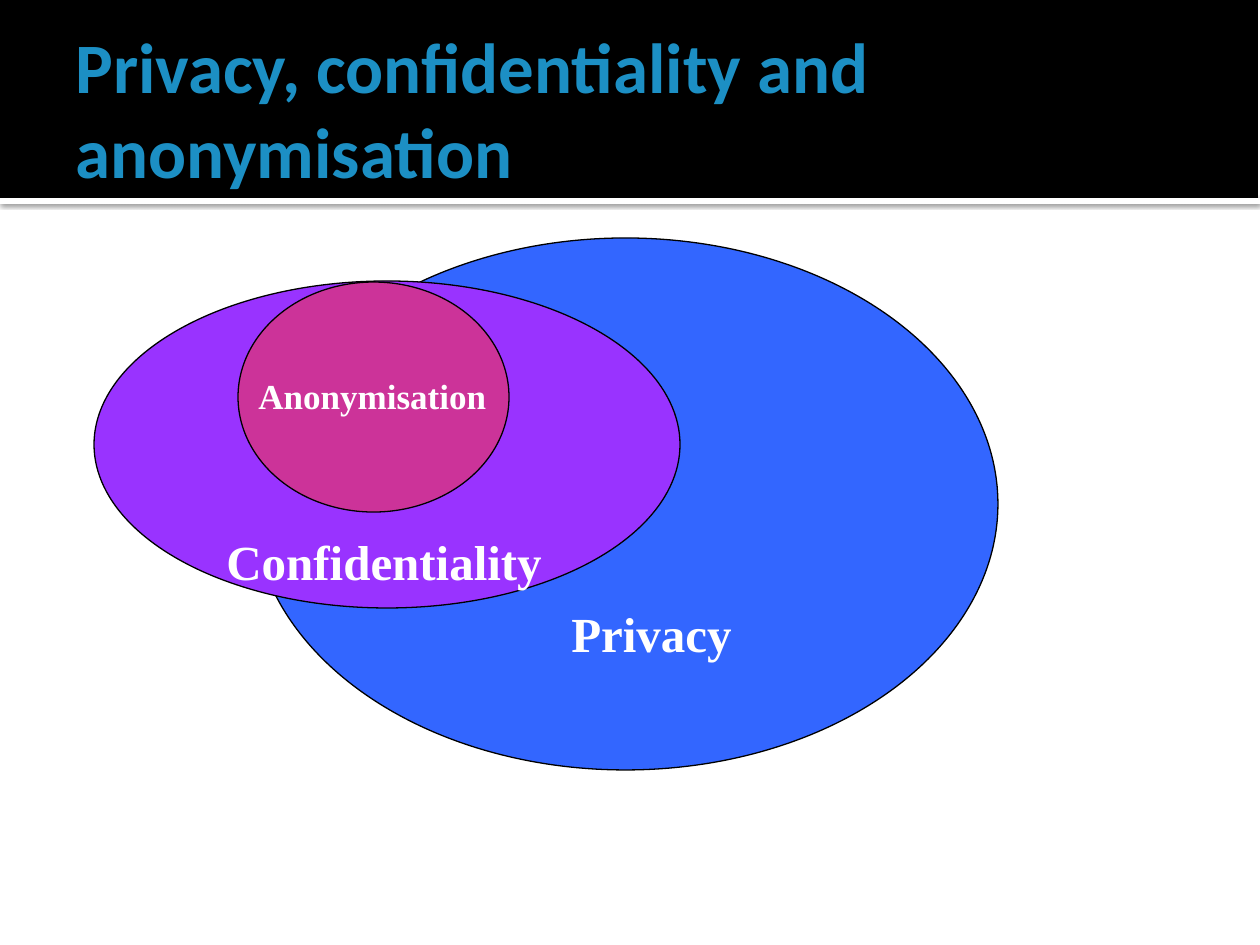
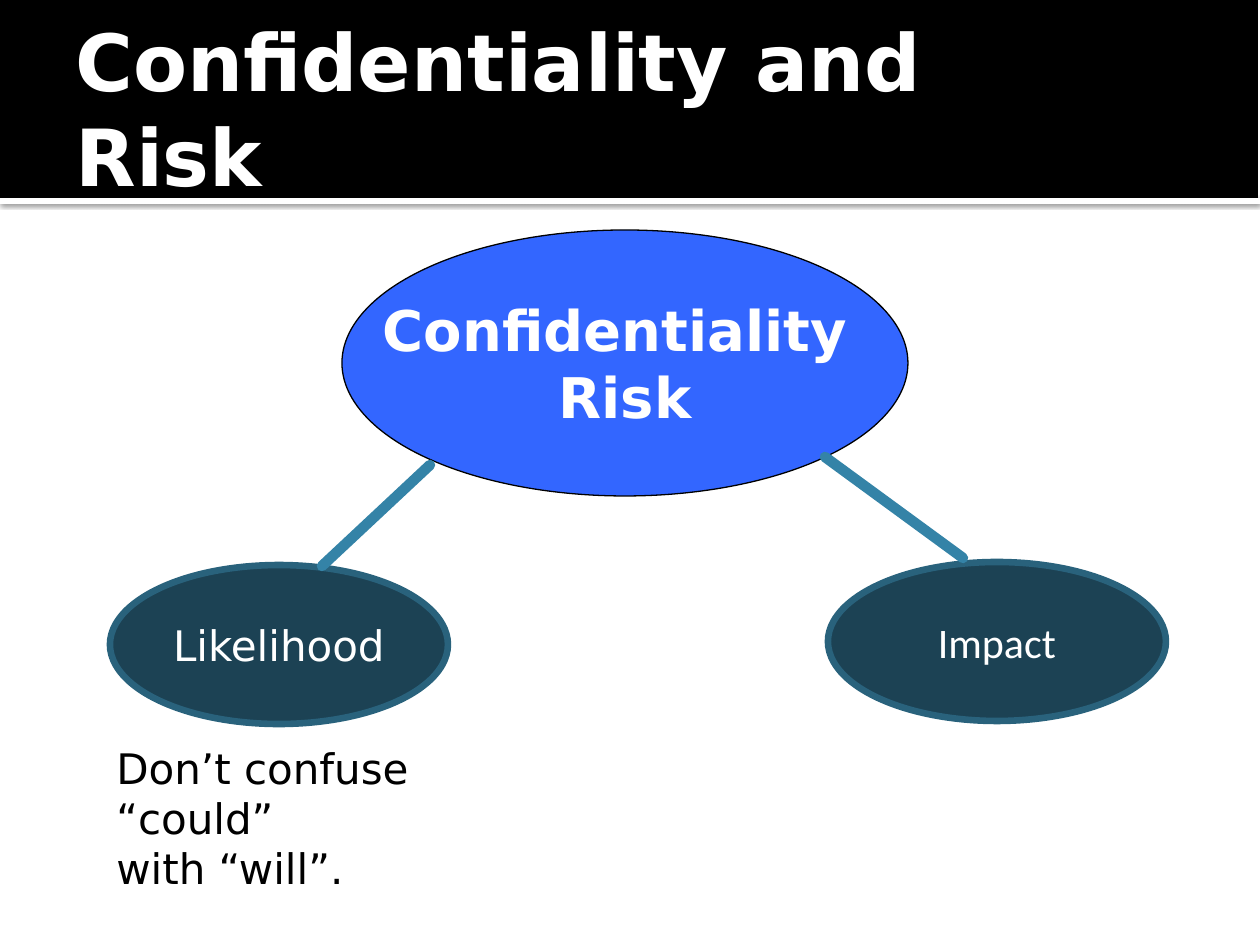
from lxml import etree
from pptx import Presentation
from pptx import util as u
from pptx.dml.color import RGBColor
from pptx.enum import shapes, text
from pptx.oxml.ns import qn

EMU_PER_PX = 914400 / 126
W, H = 1260, 945
BLACK, WHITE, BLUE = "000000", "FFFFFF", "3366FF"
TITLE_BLUE, PURPLE, MAGENTA = "1C8FC4", "9933FF", "CC3399"
TEAL, TEAL_EDGE, TEAL_LINE = "1C4254", "29627C", "3483A7"
SANS, BODY, SERIF = "DejaVu Sans", "Calibri", "Times New Roman"


def px(n):
    return u.Emu(round(n * EMU_PER_PX))


def rgb(value):
    return RGBColor.from_string(value)


class Deck:
    """Holds the shared style and the current slide."""

    def __init__(self):
        self.prs = Presentation()
        self.prs.slide_width, self.prs.slide_height = px(W), px(H)
        self.s = None

    def slide(self, title, size, font, color):
        self.s = self.prs.slides.add_slide(self.prs.slide_layouts[6])
        rule = self.shape("RECTANGLE", (0, 198, W, 6), WHITE)
        self.shadow(rule)
        self.shape("RECTANGLE", (-2, 0, W, 198), BLACK)
        sp = self.label((63, 21, 964, 173), [title], size, font, color,
                        bold=True, wrap=True, anchor="MIDDLE")
        sp.text_frame.margin_right = u.Inches(0.05)

    def shape(self, kind, box, fill, line=None, width=0.75):
        sp = self.s.shapes.add_shape(
            getattr(shapes.MSO_SHAPE, kind), *map(px, box))
        sp.shadow.inherit = False
        sp.fill.solid()
        sp.fill.fore_color.rgb = rgb(fill)
        if line:
            sp.line.color.rgb = rgb(line)
            sp.line.width = u.Pt(width)
        else:
            sp.line.fill.background()
        return sp

    def shadow(self, sp):
        effects = sp._element.spPr.find(qn("a:effectLst"))
        outer = etree.SubElement(
            effects, qn("a:outerShdw"), blurRad=str(u.Pt(2.5)),
            dist=str(u.Pt(0.8)), dir="5400000", algn="tl", rotWithShape="0")
        color = etree.SubElement(outer, qn("a:srgbClr"), val=BLACK)
        etree.SubElement(color, qn("a:alpha"), val="60000")

    def ellipse(self, box, fill, line=BLACK, width=0.75):
        return self.shape("OVAL", box, fill, line, width)

    def set_text(self, sp, lines, size, font, color, bold=False, wrap=False,
                 anchor="TOP", align="LEFT"):
        tf = sp.text_frame
        frame = {"word_wrap": wrap,
                 "vertical_anchor": getattr(text.MSO_ANCHOR, anchor)}
        for name, value in frame.items():
            setattr(tf, name, value)
        style = {"name": font, "size": u.Pt(size), "bold": bold}
        for i, line in enumerate(lines):
            p = tf.add_paragraph() if i else tf.paragraphs[0]
            p.alignment = getattr(text.PP_ALIGN, align)
            r = p.add_run()
            r.text = line
            for name, value in style.items():
                setattr(r.font, name, value)
            r.font.color.rgb = rgb(color)
        return sp

    def label(self, box, lines, size, font, color, **layout):
        sp = self.s.shapes.add_textbox(*map(px, box))
        return self.set_text(sp, lines, size, font, color, **layout)

    def connector(self, start, end, color, width):
        c = self.s.shapes.add_connector(
            shapes.MSO_CONNECTOR.STRAIGHT, *map(px, start + end))
        c.line.color.rgb = rgb(color)
        c.line.width = u.Pt(width)
        c.line._ln.set("cap", "rnd")
        etree.SubElement(c._element.spPr, qn("a:effectLst"))


def privacy_slide(d):
    d.slide("Privacy, confidentiality and anonymisation", 40.5, BODY,
            TITLE_BLUE)

    # Overlapping areas
    d.ellipse((253, 238, 745, 532), BLUE)
    d.ellipse((94, 281, 586, 327), PURPLE)
    d.ellipse((238, 282, 271, 230), MAGENTA)

    # Area names
    for name, box, size in (("Privacy", (559, 597, 188, 72), 28),
                            ("Confidentiality", (214, 525, 344, 72), 28),
                            ("Anonymisation", (246, 368, 254, 55), 20)):
        d.label(box, [name], size, SERIF, WHITE, bold=True)


def risk_slide(d):
    d.slide("Confidentiality and Risk", 45, SANS, WHITE)
    centred = {"anchor": "MIDDLE", "align": "CENTER"}

    # Risk and its two factors
    risk = d.ellipse((342, 230, 566, 266), BLUE)
    d.set_text(risk, ["Confidentiality ", "Risk"], 32, SANS, WHITE,
               bold=True, **centred)
    for name, left, top, font in (("Likelihood", 110, 565, SANS),
                                  ("Impact", 828, 562, BODY)):
        factor = d.ellipse((left, top, 338, 159), TEAL, TEAL_EDGE, 3.78)
        d.set_text(factor, [name], 24, font, WHITE, wrap=True, **centred)

    # Links from risk to factors
    d.connector((825, 457), (963, 558), TEAL_LINE, 6)
    d.connector((430, 465), (322, 566), TEAL_LINE, 6)

    # Note under likelihood
    d.label((104, 736, 438, 115), ["Don’t confuse “could”", "with “will”."],
            24, SANS, BLACK, wrap=True)


def main():
    d = Deck()
    privacy_slide(d)
    risk_slide(d)
    d.prs.save("out.pptx")


if __name__ == "__main__":
    main()
